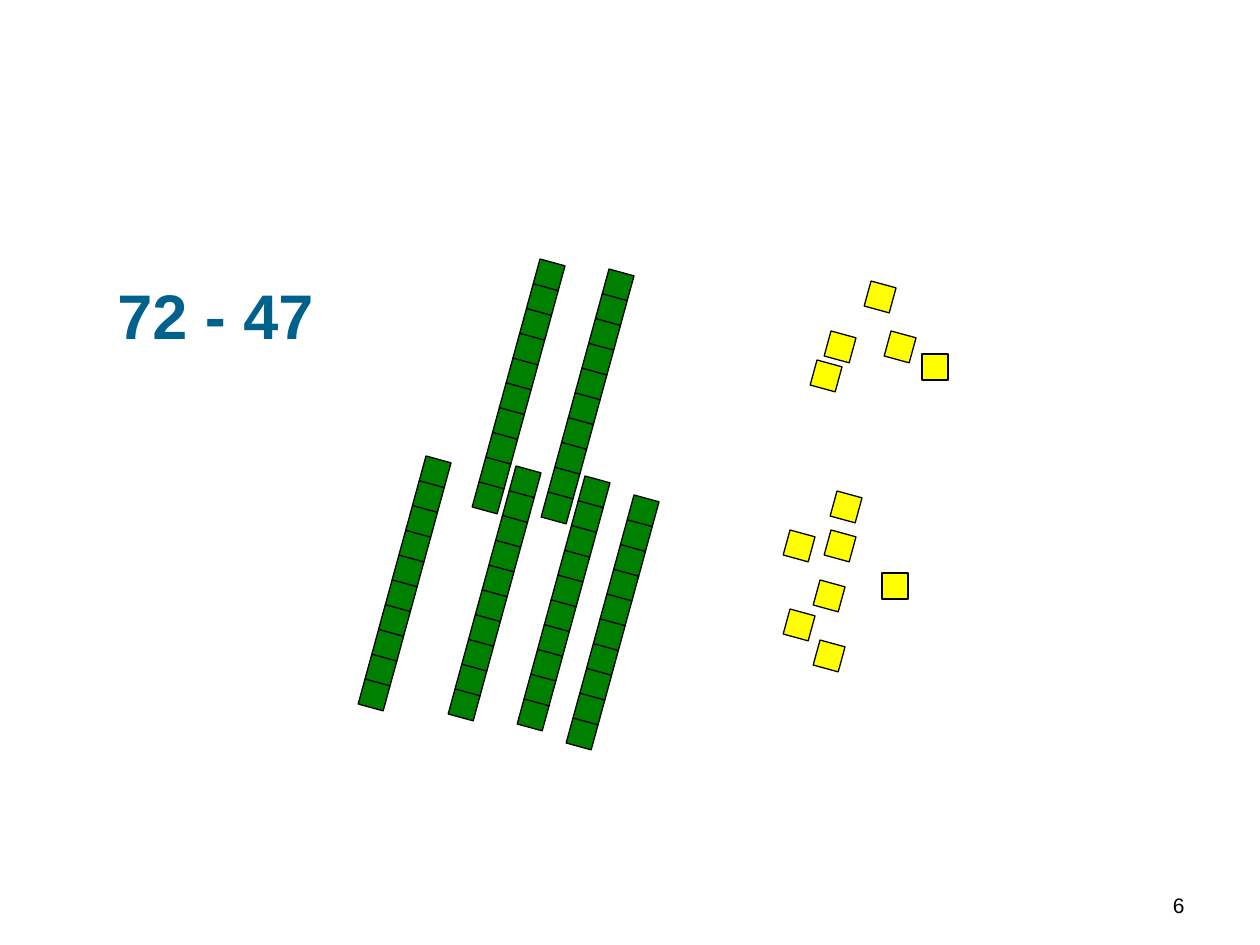
from pptx import Presentation
from pptx.dml.color import RGBColor
from pptx.enum.shapes import MSO_SHAPE
from pptx.enum.text import MSO_ANCHOR, PP_ALIGN
from pptx.util import Pt

RECT = MSO_SHAPE.RECTANGLE
TOP, BOTTOM = MSO_ANCHOR.TOP, MSO_ANCHOR.BOTTOM
LEFT, RIGHT = PP_ALIGN.LEFT, PP_ALIGN.RIGHT

BLACK = RGBColor(0x00, 0x00, 0x00)
GREEN = RGBColor(0x00, 0x80, 0x00)
YELLOW = RGBColor(0xFF, 0xFF, 0x00)
BLUE = RGBColor(0x00, 0x62, 0x8C)

EMU_PER_PX = 914400 / 126
CUBE = 26
TILT = 105.3
CUBES_PER_ROD = 10
ROD_DX, ROD_DY = -61, 223

UPPER_RODS = [(605, 272), (536, 262)]
LOWER_RODS = [(512, 469), (422, 459), (630, 498), (581, 479)]
UPPER_ONES = [(867, 284), (887, 334), (813, 363), (827, 334)]
LOWER_ONES = [(827, 533), (816, 583), (833, 494), (786, 533), (786, 612), (816, 643)]


def px(n):
    return round(n * EMU_PER_PX)


class BlockSlide:
    font = "Arial"
    line_width = Pt(0.75)

    def __init__(self, prs):
        self.slide = prs.slides.add_slide(prs.slide_layouts[6])
        self.shapes = self.slide.shapes

    def group(self):
        return self.shapes.add_group_shape().shapes

    def cube(self, shapes, x, y, color=YELLOW, tilt=TILT):
        s = shapes.add_shape(RECT, px(x), px(y), px(CUBE), px(CUBE))
        s.rotation = tilt
        s.shadow.inherit = False
        s.fill.solid()
        s.fill.fore_color.rgb = color
        s.line.color.rgb = BLACK
        s.line.width = self.line_width

    def rod(self, shapes, x, y):
        for i in range(CUBES_PER_ROD):
            part = i / (CUBES_PER_ROD - 1)
            self.cube(shapes, x + ROD_DX * part, y + ROD_DY * part, GREEN)

    def text(self, words, x, y, w, h, size, color, bold=False,
             align=LEFT, anchor=TOP, inset_top=6):
        tf = self.shapes.add_textbox(px(x), px(y), px(w), px(h)).text_frame
        tf.word_wrap = True
        tf.vertical_anchor = anchor
        tf.margin_top = px(inset_top)
        p = tf.paragraphs[0]
        p.text = words
        p.alignment = align
        p.font.name = self.font
        p.font.size = Pt(size)
        p.font.bold = bold
        p.font.color.rgb = color


def main():
    prs = Presentation()
    prs.slide_width, prs.slide_height = px(1260), px(945)
    page = BlockSlide(prs)

    for x, y in UPPER_RODS:
        page.rod(page.group(), x, y)
    for x, y in UPPER_ONES:
        page.cube(page.shapes, x, y)
    page.cube(page.shapes, 922, 354, tilt=0)

    page.text("72 - 47", 105, 265, 277, 88, 36, BLUE, bold=True, inset_top=12)

    taken_away = page.group()
    for x, y in LOWER_RODS:
        page.rod(taken_away, x, y)
    for x, y in LOWER_ONES:
        page.cube(taken_away, x, y)
    page.cube(taken_away, 882, 573, tilt=0)

    page.text("6", 903, 861, 294, 63, 12, BLACK, align=RIGHT, anchor=BOTTOM)
    prs.save("out.pptx")


if __name__ == "__main__":
    main()
